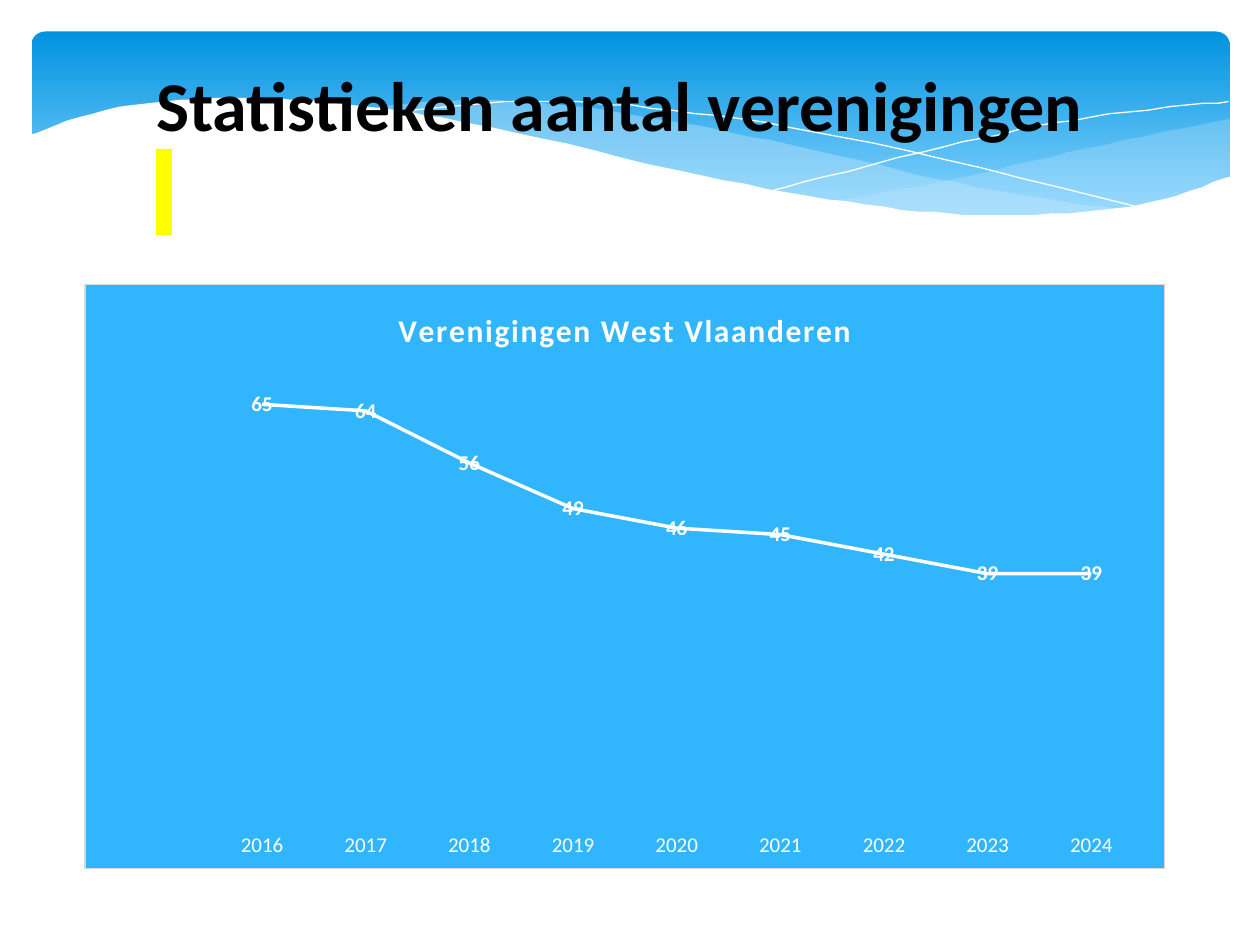
from dataclasses import dataclass
from typing import Optional

from lxml.etree import SubElement
from pptx import Presentation
from pptx.chart.data import CategoryChartData
from pptx.dml.color import RGBColor
from pptx.enum.chart import XL_CHART_TYPE, XL_LABEL_POSITION, XL_TICK_MARK
from pptx.enum.shapes import MSO_SHAPE
from pptx.enum.text import MSO_ANCHOR, PP_ALIGN
from pptx.oxml import parse_xml
from pptx.oxml.ns import nsdecls, qn
from pptx.util import Pt

COLORS = {
    "sky_top": "0293E0",
    "sky_bottom": "83D3FE",
    "mist": "C6E7FC",
    "white": "FFFFFF",
    "black": "000000",
    "highlight": "FFFF00",
    "chart": "31B6FD",
    "border": "D9D9D9",
}
FONT = "Calibri"
FIRST_YEAR = 2016
MEMBERS = [65, 64, 56, 49, 46, 45, 42, 39, 39]
CURVE_STEPS = 8


@dataclass
class Wave:
    curves: list
    fill: Optional[str] = None
    opacity: int = 100


WAVES = [
    Wave([
        [(703, 68), (620, 85), (542, 103), (476, 115)],
        [(476, 115), (554, 123), (621, 122), (673, 112), (703, 101)],
    ], "mist", 29),
    Wave([
        [(643, 120), (558, 107), (453, 83), (352, 64), (274, 57), (206, 62)],
        [(206, 62), (323, 83), (433, 108), (520, 121), (596, 124), (643, 120)],
    ], "mist", 40),
    Wave([[(222, 65), (300, 58), (384, 63), (500, 82), (653, 119)]]),
    Wave([[(441, 109), (539, 84), (623, 67), (702, 58)]]),
    Wave([
        [(703, 101), (647, 118), (571, 123), (495, 117), (400, 100),
         (282, 73), (210, 61), (140, 56), (68, 61), (17, 77)],
        [(17, 161), (703, 161)],
    ], "white"),
]


def rgb(name: str) -> RGBColor:
    return RGBColor.from_string(COLORS[name])


def format_font(font, size: float, color: str, bold: bool = False) -> None:
    font.name = FONT
    font.size = Pt(size)
    font.bold = bold
    font.color.rgb = rgb(color)


def blend(a: float, b: float, c: float, d: float, t: float) -> float:
    return b + t / 2 * (c - a + t * (2 * a - 5 * b + 4 * c - d
                                     + t * (3 * (b - c) + d - a)))


def smooth_curve(knots: list) -> list:
    padded = [knots[0], *knots, knots[-1]]
    points = [
        tuple(blend(*values, step / CURVE_STEPS) for values in zip(*window))
        for window in zip(padded, padded[1:], padded[2:], padded[3:])
        for step in range(CURVE_STEPS)
    ]
    return points + [knots[-1]]


def add_banner(page) -> None:
    banner = page.shapes.add_shape(
        MSO_SHAPE.ROUNDED_RECTANGLE, Pt(18), Pt(18), Pt(684.7), Pt(112.3))
    banner.adjustments[0] = 0.07
    banner.shadow.inherit = False
    banner.line.fill.background()
    banner.fill.gradient()
    banner.fill.gradient_angle = 270
    stops = zip(banner.fill.gradient_stops, (0, 0.9), ("sky_top", "sky_bottom"))
    for stop, position, color in stops:
        stop.position = position
        stop.color.rgb = rgb(color)


def add_wave(page, wave: Wave) -> None:
    closed = wave.fill is not None
    points = [point for knots in wave.curves for point in smooth_curve(knots)]
    builder = page.shapes.build_freeform(*points[0], scale=Pt(1))
    builder.add_line_segments(points[1:], close=closed)
    shape = builder.convert_to_shape()
    shape.shadow.inherit = False
    if not closed:
        shape.fill.background()
        shape.line.color.rgb = rgb("white")
        shape.line.width = Pt(0)
        return
    shape.line.fill.background()
    shape.fill.solid()
    shape.fill.fore_color.rgb = rgb(wave.fill)
    if wave.opacity < 100:
        color = shape._element.spPr.find(qn("a:solidFill"))[0]
        SubElement(color, qn("a:alpha"), val=str(wave.opacity * 1000))


def set_title(page) -> None:
    title = page.shapes.title
    page.shapes._spTree.append(title._element)
    title.left, title.top, title.width, title.height = (
        Pt(82), Pt(31.7), Pt(612), Pt(104.4))
    frame = title.text_frame
    frame.text = "Statistieken aantal verenigingen\n "
    frame.word_wrap = True
    frame.vertical_anchor = MSO_ANCHOR.TOP
    for paragraph in frame.paragraphs:
        paragraph.alignment = PP_ALIGN.LEFT
        paragraph.line_spacing = 1.0
        paragraph.space_before = Pt(0)
        for span in paragraph.runs:
            format_font(span.font, 40, "black", True)
    properties = frame.paragraphs[1].runs[0].font._element
    properties.find(qn("a:solidFill")).addnext(parse_xml(
        f'<a:highlight {nsdecls("a")}><a:srgbClr val="{COLORS["highlight"]}"/>'
        '</a:highlight>'))


def style_chart_area(chart) -> None:
    space = chart._chartSpace
    space.find(qn("c:txPr")).addprevious(parse_xml(
        f'<c:spPr {nsdecls("c", "a")}>'
        f'<a:solidFill><a:srgbClr val="{COLORS["chart"]}"/></a:solidFill>'
        f'<a:ln w="{Pt(0.75)}"><a:solidFill><a:srgbClr val="{COLORS["border"]}"/>'
        '</a:solidFill></a:ln></c:spPr>'))
    plot_area = space.find(qn("c:chart")).find(qn("c:plotArea"))
    for layout in plot_area.findall(qn("c:layout")):
        plot_area.remove(layout)
    layout = parse_xml(f'<c:layout {nsdecls("c")}/>')
    plot_area.insert(0, layout)
    manual = SubElement(layout, qn("c:manualLayout"))
    settings = {"layoutTarget": "inner", "xMode": "edge", "yMode": "edge",
                "x": 0.02, "y": 0.15, "w": 0.96, "h": 0.78}
    for name, value in settings.items():
        SubElement(manual, qn(f"c:{name}"), val=str(value))


def add_member_chart(page) -> None:
    data = CategoryChartData()
    data.categories = ["", *(str(FIRST_YEAR + i) for i in range(len(MEMBERS)))]
    data.add_series("Series 1", [None, *MEMBERS])
    chart = page.shapes.add_chart(
        XL_CHART_TYPE.LINE, Pt(48.2), Pt(162), Pt(617.8), Pt(334.8), data).chart
    format_font(chart.font, 10, "black")
    chart.has_legend = False
    chart.has_title = True
    heading = chart.chart_title.text_frame
    heading.text = "Verenigingen West Vlaanderen"
    span = heading.paragraphs[0].runs[0]
    format_font(span.font, 18, "white", True)
    span.font._element.set("spc", "100")

    years = chart.category_axis
    years.major_tick_mark = XL_TICK_MARK.NONE
    years.format.line.fill.background()
    format_font(years.tick_labels.font, 12, "white")
    counts = chart.value_axis
    counts.minimum_scale, counts.maximum_scale = 0, 70
    counts.has_major_gridlines = False
    counts.visible = False

    plot = chart.plots[0]
    plot.vary_by_categories = False
    series = plot.series[0]
    series.smooth = False
    series.format.line.color.rgb = rgb("white")
    series.format.line.width = Pt(2)
    labels = series.data_labels
    labels.show_value = True
    labels.position = XL_LABEL_POSITION.CENTER
    format_font(labels.font, 12, "white", True)
    style_chart_area(chart)


def main() -> None:
    deck = Presentation()
    deck.slide_width, deck.slide_height = Pt(720), Pt(540)
    page = deck.slides.add_slide(deck.slide_layouts[5])
    add_banner(page)
    for wave in WAVES:
        add_wave(page, wave)
    set_title(page)
    add_member_chart(page)
    deck.save("out.pptx")


if __name__ == "__main__":
    main()
